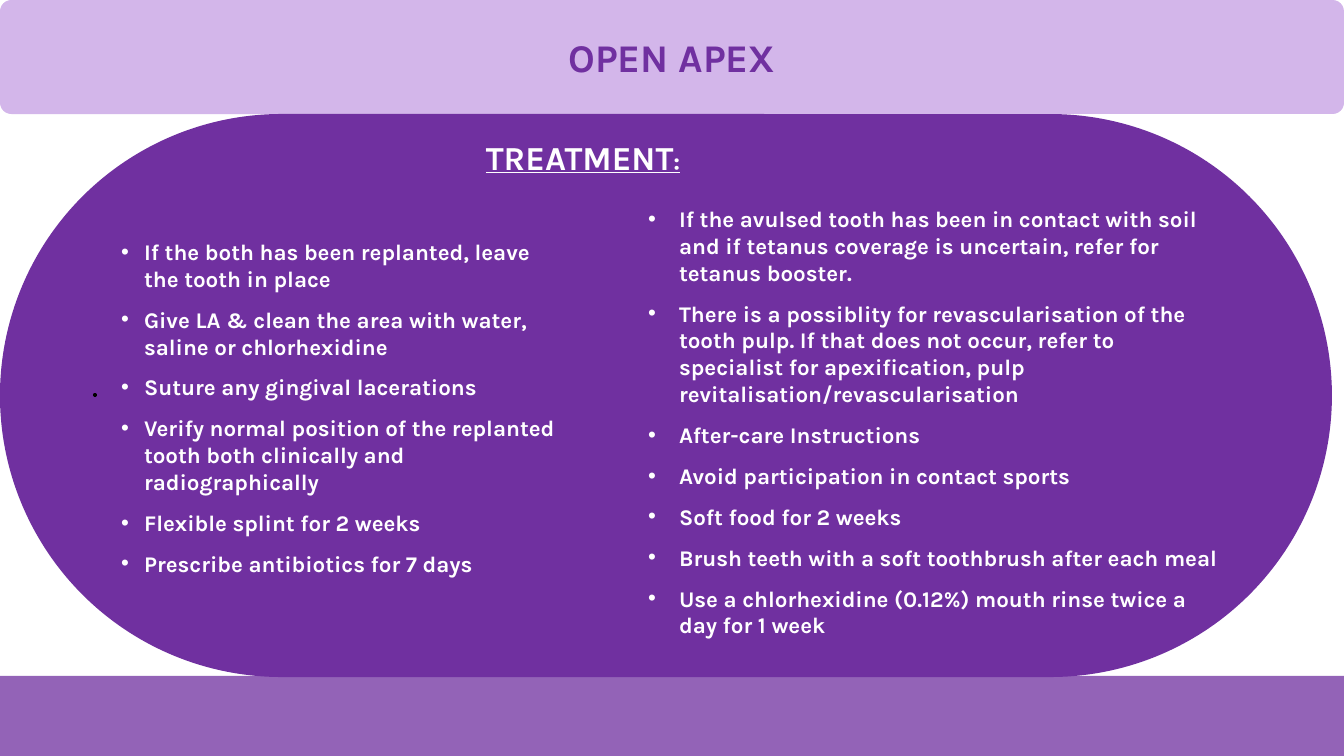
from lxml import etree
from pptx import Presentation
from pptx import util as u
from pptx.dml.color import RGBColor
from pptx.enum import shapes, text
from pptx.oxml.ns import qn

PURPLE = RGBColor(0x70, 0x30, 0xA0)
LILAC = RGBColor(0xD3, 0xB6, 0xEA)
WHITE = RGBColor(0xFF, 0xFF, 0xFF)
BLACK = RGBColor(0, 0, 0)
FONT = "Karla"
SCALE = 914400 / 100.8  # EMU in one px
WIDE, HIGH = 1344, 756

LEFT = [
    "If the both has been replanted, leave the tooth in place",
    "Give LA & clean the area with water, saline or chlorhexidine",
    "Suture any gingival lacerations",
    "Verify normal position of the replanted tooth both clinically and radiographically",
    "Flexible splint for 2 weeks",
    "Prescribe antibiotics for 7 days",
]
RIGHT = [
    "If the avulsed tooth has been in contact with soil and if tetanus coverage "
    "is uncertain, refer for tetanus booster.",
    "There is a possiblity for revascularisation of the tooth pulp. If that does not "
    "occur, refer to specialist for apexification, pulp revitalisation/revascularisation",
    "After-care Instructions",
    "Avoid participation in contact sports",
    "Soft food for 2 weeks",
    "Brush teeth with a soft toothbrush after each meal",
    "Use a chlorhexidine (0.12%) mouth rinse twice a day for 1 week",
]


def px(n):
    return u.Emu(round(n * SCALE))


def write(para, words, size=16, color=WHITE, line=None):
    run = para.add_run()
    run.text = words
    font = run.font
    font.name, font.size, font.bold = FONT, u.Pt(size), True
    font.underline = line
    font.color.rgb = color


class Deck:
    def __init__(self):
        self.prs = Presentation()
        self.prs.slide_width, self.prs.slide_height = px(WIDE), px(HIGH)
        self.slide = self.prs.slides.add_slide(self.prs.slide_layouts[3])

    def shape(self, kind, box, color, round_=None, alpha=None):
        item = self.slide.shapes.add_shape(kind, *map(px, box))
        item.shadow.inherit = False
        item.fill.solid()
        item.fill.fore_color.rgb = color
        item.line.fill.background()
        if round_ is not None:
            item.adjustments[0] = round_
        if alpha is not None:
            tint = item.fill._xPr.find(qn("a:solidFill"))[0]
            etree.SubElement(tint, qn("a:alpha"), val=str(alpha * 1000))
        return item

    def place(self, index, box):
        """Move a placeholder into its box, in front of the shapes."""
        item = self.slide.placeholders[index]
        item.left, item.top, item.width, item.height = map(px, box)
        self.slide.shapes._spTree.append(item._element)
        item.text_frame.word_wrap = True
        item.text_frame.auto_size = text.MSO_AUTO_SIZE.NONE
        return item.text_frame

    def title(self, words, box):
        frame = self.place(0, box)
        frame.vertical_anchor = text.MSO_ANCHOR.MIDDLE
        para = frame.paragraphs[0]
        para.alignment = text.PP_ALIGN.CENTER
        write(para, words, size=28, color=PURPLE)

    def list(self, index, items, box, indent):
        frame = self.place(index, box)
        frame.vertical_anchor = text.MSO_ANCHOR.TOP
        for i, words in enumerate(items):
            para = frame.paragraphs[0] if i == 0 else frame.add_paragraph()
            para.space_before = u.Pt(10)
            props = para._p.get_or_add_pPr()
            props.set("marL", str(px(indent)))
            props.set("indent", str(-px(indent)))
            tint = etree.SubElement(props, qn("a:buClr"))
            etree.SubElement(tint, qn("a:srgbClr"), val=str(WHITE))
            etree.SubElement(props, qn("a:buFont"), typeface="Arial")
            etree.SubElement(props, qn("a:buChar"), char="•")
            write(para, words)

    def label(self, parts, box):
        frame = self.slide.shapes.add_textbox(*map(px, box)).text_frame
        frame.word_wrap = True
        for words, size in parts:
            write(frame.paragraphs[0], words, size=size, line=True)


def main():
    deck = Deck()
    kind = shapes.MSO_SHAPE
    head = (0, 0, WIDE, 114)

    # Bands and panel
    deck.shape(kind.RECTANGLE, (0, 676, WIDE, 80), PURPLE, alpha=75)
    deck.shape(kind.ROUNDED_RECTANGLE, head, LILAC, round_=0.1)
    deck.shape(kind.ROUNDED_RECTANGLE, (0, 114, 1332, 563), PURPLE, round_=0.5)
    deck.shape(kind.OVAL, (93, 393, 4, 4), BLACK)

    # Headings
    deck.title("OPEN APEX", head)
    deck.label([("TREATMENT", 24), (":", 18)], (476, 132, 400, 50))

    # Treatment steps
    deck.list(1, LEFT, (111, 233, 459, 326), indent=23)
    deck.list(2, RIGHT, (638, 200, 595, 448), indent=31)

    deck.prs.save("out.pptx")


if __name__ == "__main__":
    main()
